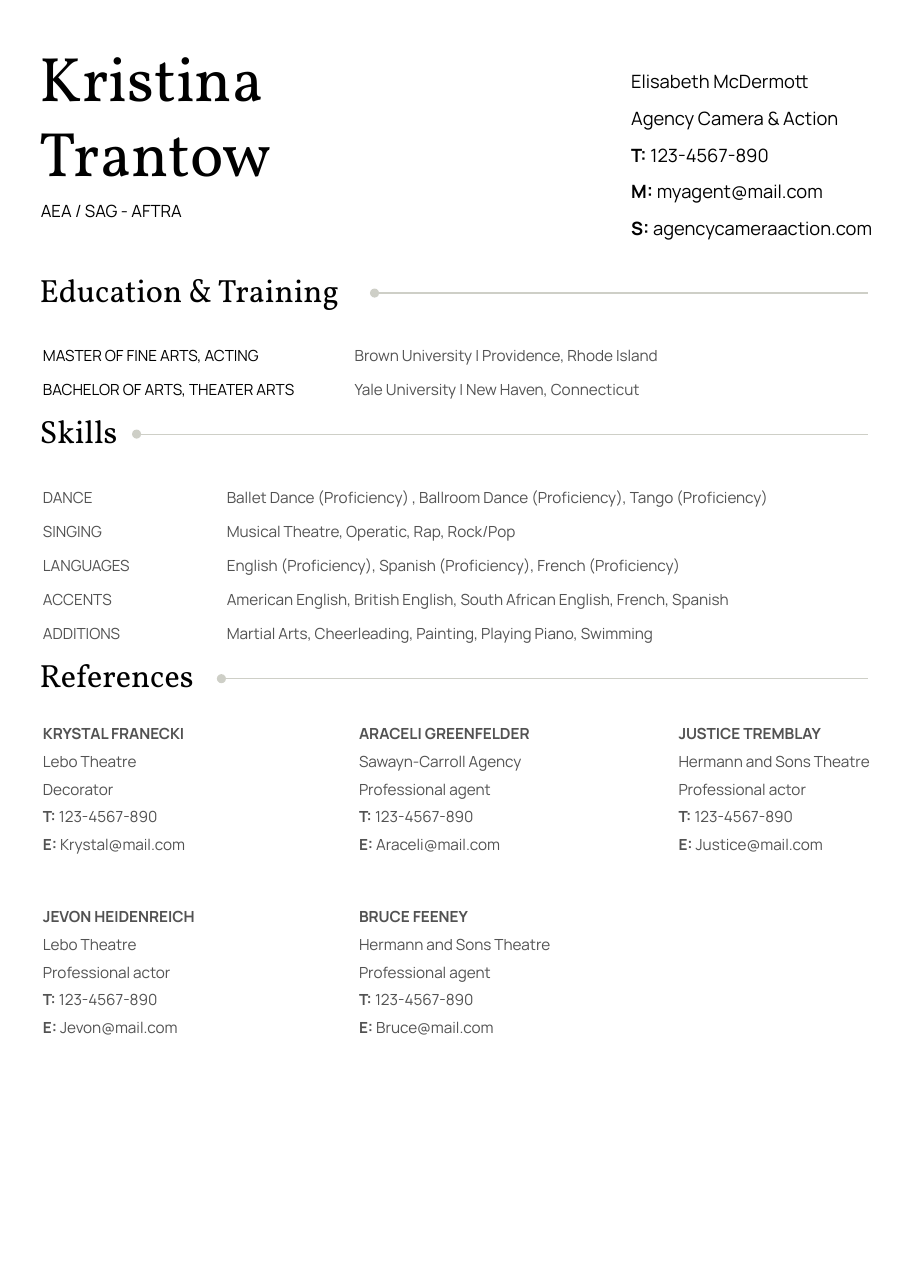
from lxml.etree import SubElement
from pptx import Presentation
from pptx.dml.color import RGBColor
from pptx.enum.shapes import MSO_CONNECTOR
from pptx.enum.text import MSO_AUTO_SIZE
from pptx.oxml.ns import qn
from pptx.util import Pt

COLORS = {"ink": "000000", "body": "525252", "rule": "CECFC7"}
SERIF, SANS = "Vollkorn", "Manrope"

NAME = "Kristina\nTrantow"
UNIONS = "AEA / SAG - AFTRA"
CONTACT = [
    "Elisabeth McDermott",
    "Agency Camera & Action",
    "T: 123-4567-890",
    "M: myagent@mail.com",
    "S: agencycameraaction.com",
]
# title, top, width, start of its rule
HEADINGS = [
    ("Education & Training", 176.4, 231.84, 244.8),
    ("Skills", 268.56, 60.48, 89.28),
    ("References", 428.4, 113.04, 144.72),
]
EDUCATION = [
    ("MASTER OF FINE ARTS, ACTING", "Brown University | Providence, Rhode Island"),
    ("BACHELOR OF ARTS, THEATER ARTS", "Yale University | New Haven, Connecticut"),
]
SKILLS = [
    ("DANCE", "Ballet Dance (Proficiency) , Ballroom Dance (Proficiency), Tango (Proficiency)"),
    ("SINGING", "Musical Theatre, Operatic, Rap, Rock/Pop"),
    ("LANGUAGES", "English (Proficiency), Spanish (Proficiency), French (Proficiency)"),
    ("ACCENTS", "American English, British English, South African English, French, Spanish"),
    ("ADDITIONS", "Martial Arts, Cheerleading, Painting, Playing Piano, Swimming"),
]
PHONE = "T: 123-4567-890"
REFERENCES = [
    ("KRYSTAL FRANECKI", "Lebo Theatre", "Decorator", PHONE, "E: Krystal@mail.com"),
    ("ARACELI GREENFELDER", "Sawayn-Carroll Agency", "Professional agent", PHONE,
     "E: Araceli@mail.com"),
    ("JUSTICE TREMBLAY", "Hermann and Sons Theatre", "Professional actor", PHONE,
     "E: Justice@mail.com"),
    ("JEVON HEIDENREICH", "Lebo Theatre", "Professional actor", PHONE, "E: Jevon@mail.com"),
    ("BRUCE FEENEY", "Hermann and Sons Theatre", "Professional agent", PHONE,
     "E: Bruce@mail.com"),
]

MARGIN, INDENT, RULE_END = 25.92, 28.08, 567.36
CONTACT_LEFT, CONTACT_TOP, CONTACT_STEP = 412.56, 34.56, 23.92
ROW_STEP = 22.14
REFERENCE_COLUMNS = [(INDENT, 160.56), (234.72, 131.76), (443.52, 131.76)]  # left, width
REFERENCE_TOP, REFERENCE_ROW, REFERENCE_STEP = 467.28, 119.52, 18.18


def add_text(slide, text, left, top, width, height, size=10, font=SANS, color="body",
             bold=False, spacing=None, grow=True):
    """Add a text box; a label ending in a colon and a space is set in bold."""
    tb = slide.shapes.add_textbox(Pt(left), Pt(top), Pt(width), Pt(height))
    tf = tb.text_frame
    tf.word_wrap = True
    tf.auto_size = MSO_AUTO_SIZE.SHAPE_TO_FIT_TEXT if grow else MSO_AUTO_SIZE.NONE
    tf.margin_left = tf.margin_top = tf.margin_right = tf.margin_bottom = 0
    for i, line in enumerate(text.split("\n")):
        p = tf.add_paragraph() if i else tf.paragraphs[0]
        if spacing:
            p.line_spacing = spacing
        label, colon, rest = line.rpartition(": ")
        for part, is_bold in ((label + colon, True), (rest, bold)):
            if part:
                r = p.add_run()
                r.text = part
                r.font.name, r.font.size, r.font.bold = font, Pt(size), is_bold
                r.font.color.rgb = RGBColor.from_string(COLORS[color])


def add_heading(slide, title, top, width, rule_start):
    y = Pt(top + 15.12)
    rule = slide.shapes.add_connector(MSO_CONNECTOR.STRAIGHT, Pt(rule_start), y,
                                      Pt(RULE_END), y)
    rule.line.color.rgb = RGBColor.from_string(COLORS["rule"])
    rule.line.width = Pt(0.75)
    props = rule.element.spPr
    SubElement(props.find(qn("a:ln")), qn("a:headEnd"), type="oval")
    SubElement(props, qn("a:effectLst"))
    add_text(slide, title, MARGIN, top, width, 25.2, size=21, font=SERIF, color="ink")


def add_rows(slide, rows, top, label_width, value_left, value_width, label_color="body"):
    for i, (label, value) in enumerate(rows):
        y = top + i * ROW_STEP
        add_text(slide, label, INDENT, y, label_width, 12.24, color=label_color, spacing=1.85)
        add_text(slide, value, value_left, y, value_width, 12.24, spacing=1.85)


def main():
    prs = Presentation()
    prs.slide_width, prs.slide_height = Pt(595.44), Pt(841.68)
    slide = prs.slides.add_slide(prs.slide_layouts[6])

    add_text(slide, NAME, MARGIN, 25.2, 226.08, 106.56, size=41, font=SERIF, color="ink",
             grow=False)
    add_text(slide, UNIONS, 26.64, 131.04, 193.68, 13.68, size=11, color="ink")
    for i, line in enumerate(CONTACT):
        add_text(slide, line, CONTACT_LEFT, CONTACT_TOP + i * CONTACT_STEP, 170.64, 14.4,
                 size=12, color="ink", spacing=1.8)

    for heading in HEADINGS:
        add_heading(slide, *heading)
    add_rows(slide, EDUCATION, 216, 187.92, 231.84, 272.16, label_color="ink")
    add_rows(slide, SKILLS, 308.88, 108, 148.32, 381.6)

    for n, person in enumerate(REFERENCES):
        row, col = divmod(n, len(REFERENCE_COLUMNS))
        left, width = REFERENCE_COLUMNS[col]
        for i, line in enumerate(person):
            y = REFERENCE_TOP + row * REFERENCE_ROW + i * REFERENCE_STEP
            add_text(slide, line, left, y, width, 12.24, bold=i == 0, spacing=1.5)

    prs.save("out.pptx")


if __name__ == "__main__":
    main()
